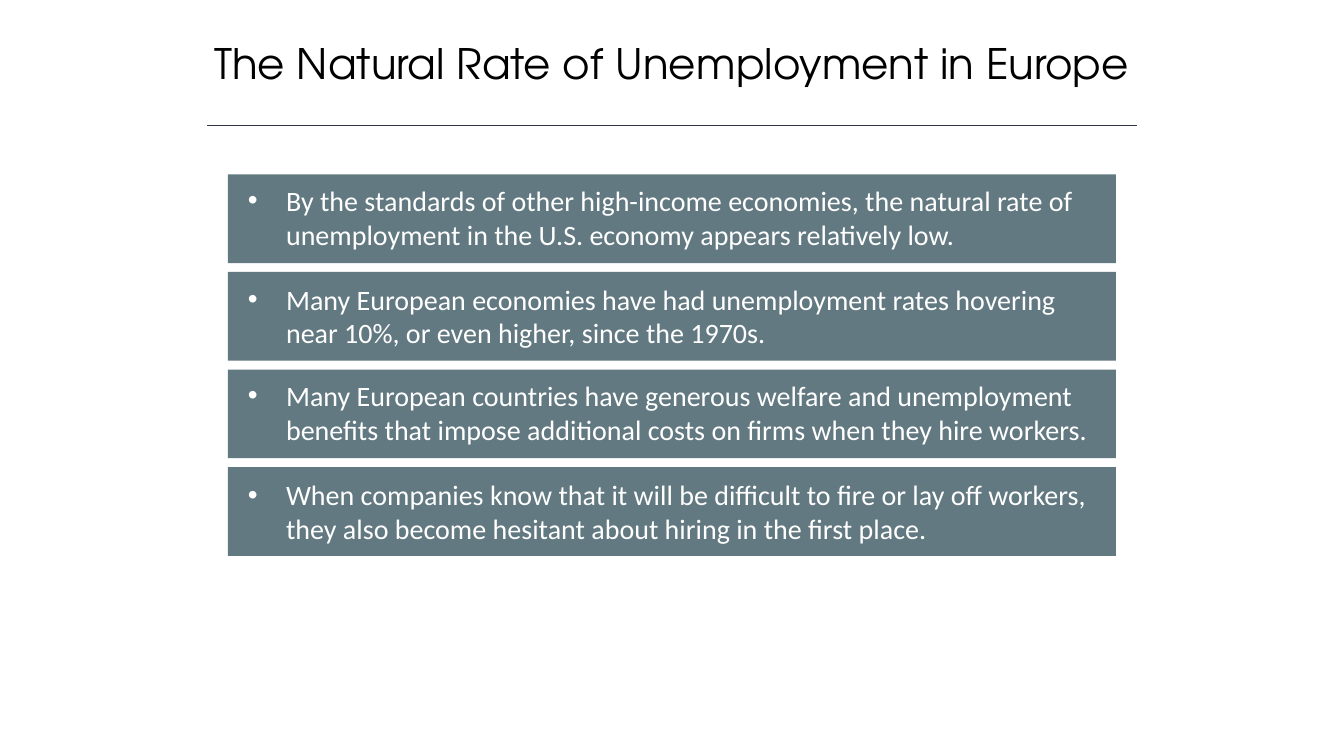
"""Build the slide on the natural rate of unemployment in Europe."""
from dataclasses import dataclass

from lxml.etree import SubElement
from pptx import Presentation
from pptx.dml.color import RGBColor
from pptx.enum.shapes import MSO_CONNECTOR, MSO_SHAPE
from pptx.enum.text import MSO_ANCHOR, MSO_AUTO_SIZE, PP_ALIGN
from pptx.oxml.ns import qn
from pptx.shapes.autoshape import Shape
from pptx.shapes.group import GroupShape
from pptx.slide import Slide
from pptx.util import Pt

COLORS = {"title": "000000", "rule": "323542", "panel": "627981", "statement": "FFFFFF"}
PANEL_LEFT, PANEL_TOP, PANEL_WIDTH, PANEL_HEIGHT = 162.72, 124.56, 634.32, 63.36
PANEL_PITCH = 69.7
STATEMENT_LEFT, STATEMENT_WIDTH, STATEMENT_HEIGHT = 169.92, 614.88, 55.44
BULLET_INDENT = 27.36


@dataclass(frozen=True)
class Statement:
    """A bulleted statement and its distance below the top of its panel."""

    text: str
    inset: float


STATEMENTS = [
    Statement("By the standards of other high-income economies, the natural rate of "
              "unemployment in the U.S. economy appears relatively low.", 2.9),
    Statement("Many European economies have had unemployment rates hovering "
              "near 10%, or even higher, since the 1970s.", 3.8),
    Statement("Many European countries have generous welfare and unemployment "
              "benefits that impose additional costs on firms when they hire workers.", 2.9),
    Statement("When companies know that it will be difficult to fire or lay off workers, "
              "they also become hesitant about hiring in the first place.", 4.2),
]


def color(role: str) -> RGBColor:
    """Return the colour of a role on the slide."""
    return RGBColor.from_string(COLORS[role])


def write_title(slide: Slide, text: str) -> None:
    """Place and format the slide title."""
    title = slide.shapes.title
    title.left, title.top, title.width, title.height = Pt(120), Pt(23), Pt(720), Pt(44)
    frame = title.text_frame
    frame.text = text
    frame.auto_size = MSO_AUTO_SIZE.SHAPE_TO_FIT_TEXT
    frame.vertical_anchor = MSO_ANCHOR.MIDDLE
    heading = frame.paragraphs[0]
    heading.alignment = PP_ALIGN.CENTER
    heading.font.name = "TeX Gyre Adventor"
    heading.font.size = Pt(30)
    heading.font.color.rgb = color("title")


def draw_rule(slide: Slide) -> None:
    """Draw the thin line under the title."""
    rule = slide.shapes.add_connector(
        MSO_CONNECTOR.STRAIGHT, Pt(148), Pt(89.5), Pt(812), Pt(89.5))
    rule.line.color.rgb = color("rule")
    rule.line.width = Pt(1)
    SubElement(rule._element.spPr, qn("a:effectLst"))


def add_rectangle(group: GroupShape, left: float, top: float,
                  width: float, height: float) -> Shape:
    """Add a plain panel-coloured rectangle to a group."""
    rectangle = group.shapes.add_shape(
        MSO_SHAPE.RECTANGLE, Pt(left), Pt(top), Pt(width), Pt(height))
    rectangle.fill.solid()
    rectangle.fill.fore_color.rgb = color("panel")
    rectangle.line.fill.background()
    rectangle.shadow.inherit = False
    return rectangle


def draw_statement(slide: Slide, statement: Statement, top: float) -> None:
    """Draw a panel holding one bulleted statement."""
    group = slide.shapes.add_group_shape()
    add_rectangle(group, PANEL_LEFT, top, PANEL_WIDTH, PANEL_HEIGHT)
    label = add_rectangle(group, STATEMENT_LEFT, top + statement.inset,
                          STATEMENT_WIDTH, STATEMENT_HEIGHT)
    frame = label.text_frame
    frame.text = statement.text
    frame.word_wrap = True
    frame.auto_size = MSO_AUTO_SIZE.SHAPE_TO_FIT_TEXT
    frame.vertical_anchor = MSO_ANCHOR.TOP
    paragraph = frame.paragraphs[0]
    paragraph.alignment = PP_ALIGN.LEFT
    properties = paragraph._p.get_or_add_pPr()
    properties.set("marL", str(Pt(BULLET_INDENT)))
    properties.set("indent", str(-Pt(BULLET_INDENT)))
    SubElement(properties, qn("a:buFont"), typeface="Arial")
    SubElement(properties, qn("a:buChar"), char="•")
    paragraph.font.name = "Calibri"
    paragraph.font.size = Pt(20)
    paragraph.font.color.rgb = color("statement")


def main() -> None:
    """Build and save the presentation."""
    presentation = Presentation()
    presentation.slide_width, presentation.slide_height = Pt(960), Pt(540)
    slide = presentation.slides.add_slide(presentation.slide_layouts[5])
    write_title(slide, "The Natural Rate of Unemployment in Europe")
    draw_rule(slide)
    for row, statement in enumerate(STATEMENTS):
        draw_statement(slide, statement, PANEL_TOP + row * PANEL_PITCH)
    presentation.save("out.pptx")


if __name__ == "__main__":
    main()
